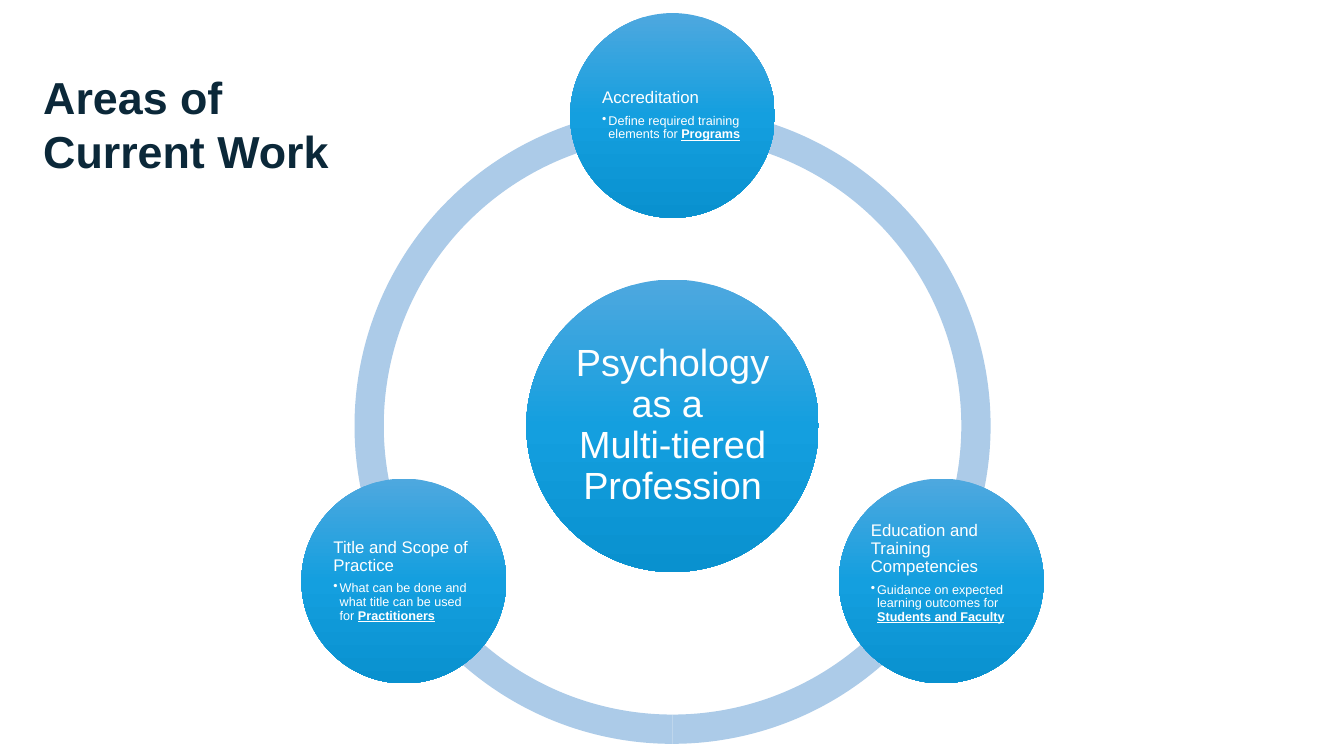
import copy
import math

import lxml.etree
import pptx
import pptx.dml.color
import pptx.enum.shapes
import pptx.enum.text
import pptx.oxml.ns
import pptx.util
from pptx.util import Cm

RGBColor = pptx.dml.color.RGBColor
SHAPES = pptx.enum.shapes.MSO_SHAPE
ALIGN = pptx.enum.text.PP_ALIGN

WHITE = RGBColor(0xFF, 0xFF, 0xFF)
NAVY = RGBColor(0x0B, 0x28, 0x39)
RING_BLUE = RGBColor(0xAC, 0xCB, 0xE8)
DISC_STOPS = [
    (0, RGBColor(0x4E, 0xA8, 0xDF)),
    (0.5, RGBColor(0x14, 0x9F, 0xDF)),
    (1, RGBColor(0x09, 0x91, 0xCF)),
]

CENTRE_X, CENTRE_Y = 16.95, 10.73
RING_DIAMETER = 16.03
RING_THICKNESS = 0.046
RING_ANGLES = [18, 90, 162]
HUB_DIAMETER = 7.37
AREA_DIAMETER = 5.16
ORBIT_RADIUS = 7.82

# Heading, description, emphasised audience, bottom inset in cm
AREAS = [
    ("Accreditation", "Define required training elements for ", "Programs", 0.05),
    ("Education and Training Competencies",
     "Guidance on expected learning outcomes for ", "Students and Faculty", 0.45),
    ("Title and Scope of Practice",
     "What can be done and what title can be used for ", "Practitioners", 0.05),
]


def add_round_shape(slide, kind, centre_x, centre_y, diameter):
    shape = slide.shapes.add_shape(
        kind, Cm(centre_x - diameter / 2), Cm(centre_y - diameter / 2),
        Cm(diameter), Cm(diameter))
    shape.shadow.inherit = False
    shape.line.fill.background()
    return shape


def add_ring(slide):
    """Draw the ring as arcs that each run from one angle to the next."""
    for start, end in zip(RING_ANGLES, RING_ANGLES[1:] + RING_ANGLES[:1]):
        arc = add_round_shape(slide, SHAPES.BLOCK_ARC, CENTRE_X, CENTRE_Y, RING_DIAMETER)
        # Angles are stored in 60000ths of a degree, adjustments in 100000ths
        arc.adjustments[0] = start * 0.6
        arc.adjustments[1] = end * 0.6
        arc.adjustments[2] = RING_THICKNESS
        arc.fill.solid()
        arc.fill.fore_color.rgb = RING_BLUE


def fill_with_gradient(shape):
    shape.fill.gradient()
    shape.fill.gradient_angle = 270
    stop_list = shape._element.spPr.find(".//" + pptx.oxml.ns.qn("a:gsLst"))
    stop_list.insert(1, copy.deepcopy(stop_list[0]))
    for stop, (position, color) in zip(shape.fill.gradient_stops, DISC_STOPS):
        stop.position = position
        stop.color.rgb = color


def add_disc(slide, centre_x, centre_y, diameter, inset, bottom_inset):
    """Add a gradient circle and return its text frame."""
    disc = add_round_shape(slide, SHAPES.OVAL, centre_x, centre_y, diameter)
    fill_with_gradient(disc)
    frame = disc.text_frame
    frame.word_wrap = True
    frame.vertical_anchor = pptx.enum.text.MSO_ANCHOR.MIDDLE
    frame.margin_left = frame.margin_right = frame.margin_top = Cm(inset)
    frame.margin_bottom = Cm(bottom_inset)
    return frame


def style_paragraph(para, size, color, align=ALIGN.LEFT, line_spacing=None, space_after=0):
    para.alignment = align
    para.line_spacing = line_spacing
    para.space_after = pptx.util.Pt(space_after)
    para.font.name = "Arial"
    para.font.size = pptx.util.Pt(size)
    para.font.color.rgb = color


def add_bullet(para, indent):
    properties = para._p.get_or_add_pPr()
    properties.set("marL", str(Cm(indent)))
    properties.set("indent", str(-Cm(indent)))
    bullet = lxml.etree.SubElement(properties, pptx.oxml.ns.qn("a:buChar"))
    bullet.set("char", "•")


def add_hub(slide):
    frame = add_disc(slide, CENTRE_X, CENTRE_Y, HUB_DIAMETER, 0.1, 0.1)
    para = frame.paragraphs[0]
    para.text = "Psychology as a \vMulti-tiered Profession"
    style_paragraph(para, 27, WHITE, ALIGN.CENTER, line_spacing=0.9)


def add_area(slide, angle, heading, description, audience, bottom_inset):
    frame = add_disc(
        slide, CENTRE_X + ORBIT_RADIUS * math.sin(angle),
        CENTRE_Y - ORBIT_RADIUS * math.cos(angle), AREA_DIAMETER, 0.05, bottom_inset)
    heading_para = frame.paragraphs[0]
    heading_para.text = heading
    style_paragraph(heading_para, 12, WHITE, line_spacing=0.9, space_after=4.8)

    detail_para = frame.add_paragraph()
    detail_para.level = 1
    add_bullet(detail_para, 0.16)
    detail_para.add_run().text = description
    audience_span = detail_para.add_run()
    audience_span.text = audience
    audience_span.font.bold = True
    audience_span.font.underline = True
    style_paragraph(detail_para, 9, WHITE, line_spacing=0.9, space_after=1.5)


def add_title(slide):
    box = slide.shapes.add_textbox(Cm(0.84), Cm(1.63), Cm(8.99), Cm(3))
    box.text_frame.word_wrap = True
    para = box.text_frame.paragraphs[0]
    para.text = "Areas of Current Work"
    style_paragraph(para, 32, NAVY)
    para.font.bold = True


def main():
    deck = pptx.Presentation()
    deck.slide_width, deck.slide_height = Cm(33.87), Cm(19.05)
    slide = deck.slides.add_slide(deck.slide_layouts[6])
    add_ring(slide)
    add_hub(slide)
    for index, area in enumerate(AREAS):
        add_area(slide, index * math.tau / len(AREAS), *area)
    add_title(slide)
    deck.save("out.pptx")


if __name__ == "__main__":
    main()
